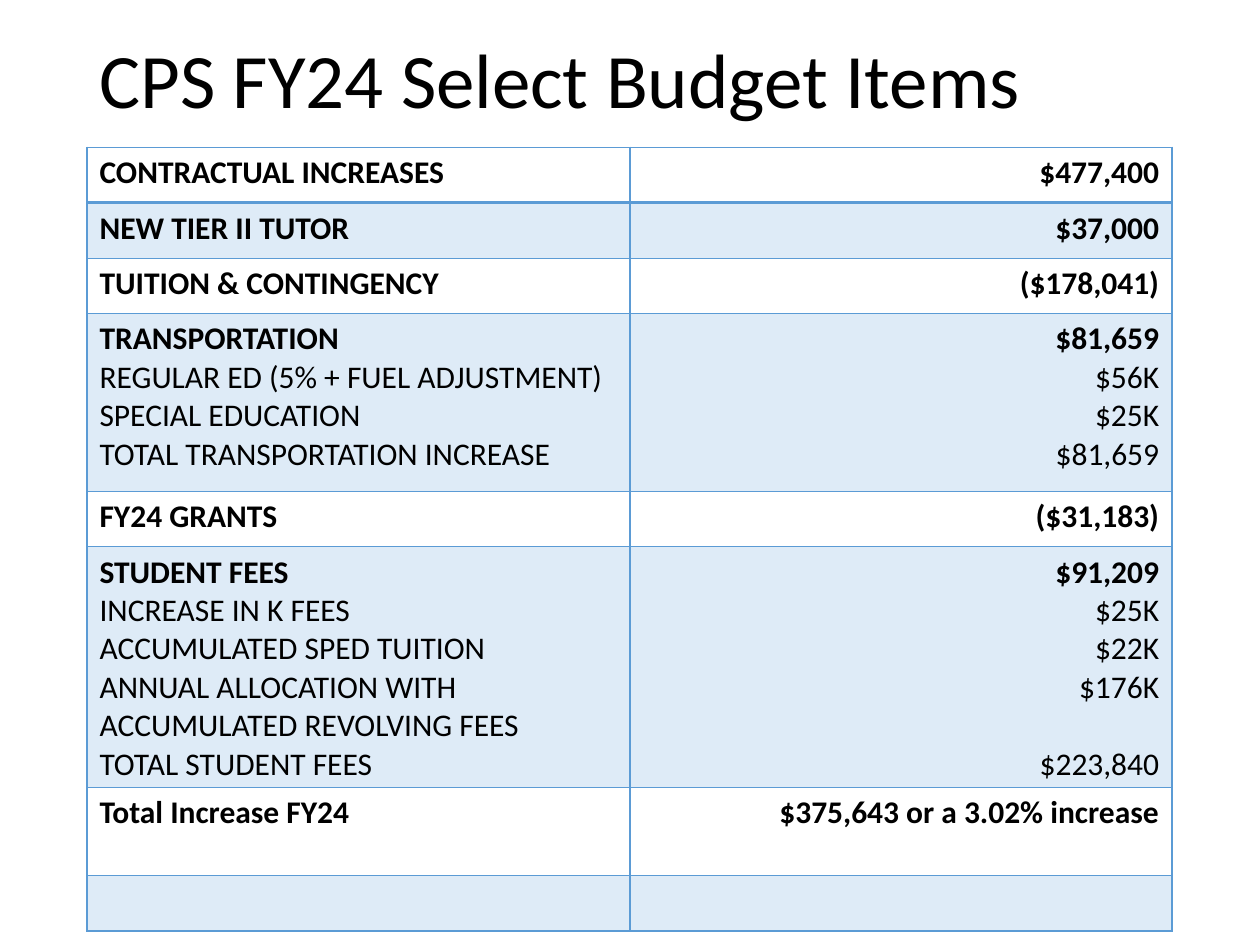
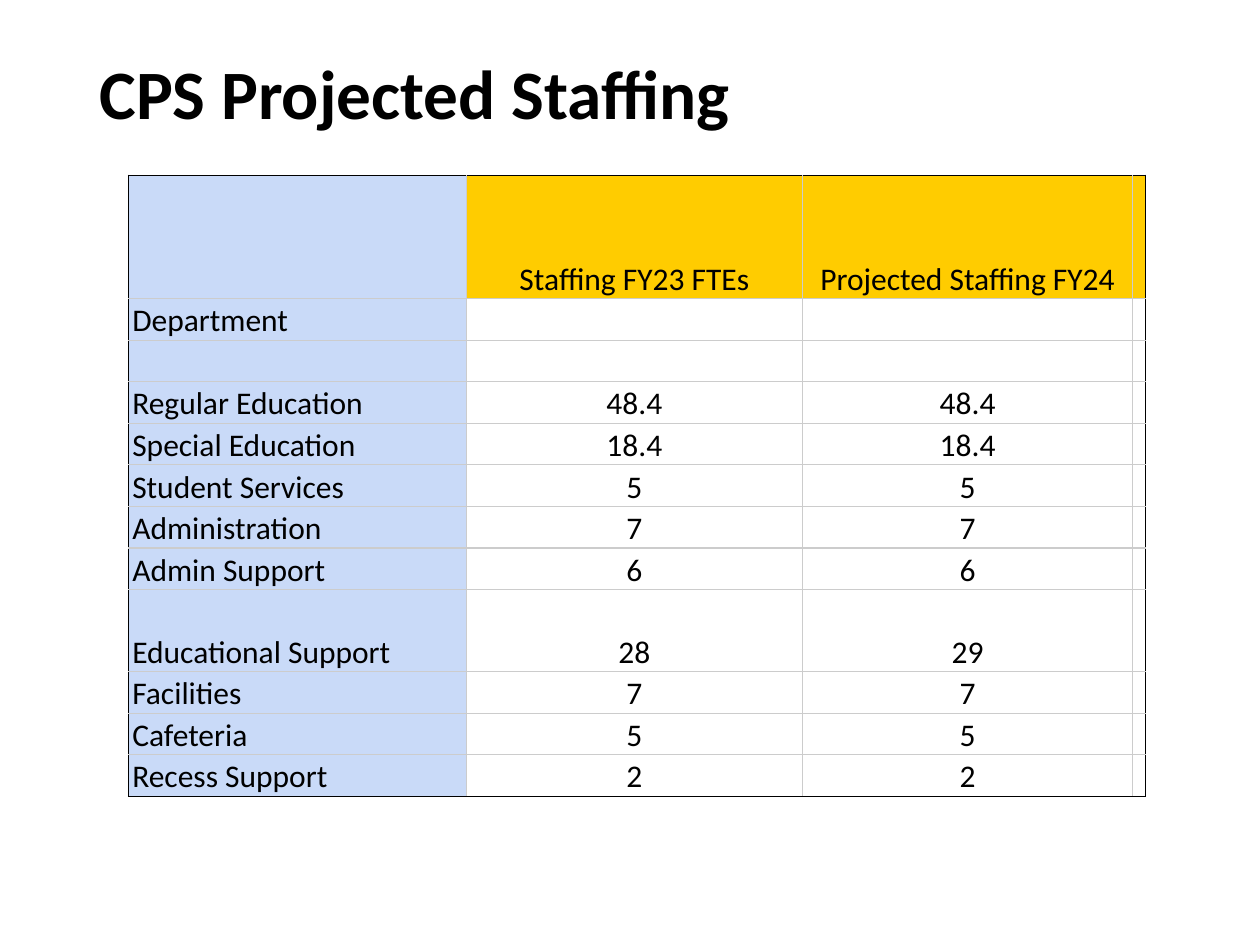
from lxml import etree
from pptx import Presentation
from pptx.dml.color import RGBColor
from pptx.enum.text import MSO_ANCHOR as Anchor, PP_ALIGN as Align
from pptx.oxml.ns import qn
from pptx.util import Inches, Pt

FONT = "Calibri"
BLACK, BLUE, PALE_BLUE = "000000", "5B9BD5", "DEEBF7"
GREY, LAVENDER, GOLD = "CCCCCC", "C9DAF8", "FFCC00"
BODY_SIZE = 18
LINE_HEIGHT = 1.22

BUDGET_ITEMS = [
    ("CONTRACTUAL INCREASES", "$477,400"),
    ("NEW TIER II TUTOR", "$37,000"),
    ("TUITION & CONTINGENCY", "($178,041)"),
    ("TRANSPORTATION\nREGULAR ED (5% + FUEL ADJUSTMENT)\nSPECIAL EDUCATION\n"
     "TOTAL TRANSPORTATION INCREASE", "$81,659\n$56K\n$25K\n$81,659"),
    ("FY24 GRANTS", "($31,183)"),
    ("STUDENT FEES\nINCREASE IN K FEES\nACCUMULATED SPED TUITION\nANNUAL ALLOCATION WITH\n"
     "ACCUMULATED REVOLVING FEES\nTOTAL STUDENT FEES",
     "$91,209\n$25K\n$22K\n$176K\n\n$223,840"),
    ("Total Increase FY24", "$375,643 or a 3.02% increase"),
    ("", ""),
]
STAFFING = [
    ("", "Staffing FY23 FTEs", "Projected Staffing FY24", ""),
    ("Department", "", "", ""),
    ("", "", "", ""),
    ("Regular Education", "48.4", "48.4", ""),
    ("Special Education", "18.4", "18.4", ""),
    ("Student Services", "5", "5", ""),
    ("Administration", "7", "7", ""),
    ("Admin Support", "6", "6", ""),
    ("Educational Support", "28", "29", ""),
    ("Facilities", "7", "7", ""),
    ("Cafeteria", "5", "5", ""),
    ("Recess Support", "2", "2", ""),
]


def color(value):
    return RGBColor.from_string(value)


def apply_format(target, values):
    for name, value in values.items():
        setattr(target, name, value)


class Deck:
    def __init__(self):
        self.presentation = Presentation()
        apply_format(self.presentation, {"slide_width": Inches(10), "slide_height": Inches(7.5)})
        self.slide = None

    def add_slide(self):
        self.slide = self.presentation.slides.add_slide(self.presentation.slide_layouts[6])

    def add_text(self, paragraph, text, size, bold=False):
        run = paragraph.add_run()
        run.text = text
        apply_format(run.font, {"name": FONT, "size": Pt(size), "bold": bold})
        run.font.color.rgb = color(BLACK)

    def title(self, text, top, height, size, bold=False):
        shape = self.slide.shapes.add_textbox(Inches(0.69), Inches(top), Inches(8.62), Inches(height))
        frame = shape.text_frame
        apply_format(frame, {"word_wrap": True, "vertical_anchor": Anchor.MIDDLE})
        paragraph = frame.paragraphs[0]
        paragraph.line_spacing = 0.9
        self.add_text(paragraph, text, size, bold)

    def cell_text(self, cell, text, align, bold_heading):
        """Add one paragraph per line; an empty line becomes space above the next."""
        paragraph = cell.text_frame.paragraphs[0]
        skipped = 0
        for number, line in enumerate(text.split("\n")):
            if not line:
                skipped += 1
                continue
            if number:
                paragraph = cell.text_frame.add_paragraph()
            paragraph.alignment = align
            paragraph.space_before = Pt(round(skipped * BODY_SIZE * LINE_HEIGHT))
            skipped = 0
            self.add_text(paragraph, line, BODY_SIZE, bold_heading and number == 0)

    def cell_borders(self, cell, borders):
        """Borders are (colour, points) pairs in the order left, right, top, bottom."""
        properties = cell._tc.get_or_add_tcPr()
        for side, (line_color, points) in zip("LRTB", borders):
            line = etree.SubElement(properties, qn(f"a:ln{side}"), w=str(Pt(points)))
            fill = etree.SubElement(line, qn("a:solidFill"))
            etree.SubElement(fill, qn("a:srgbClr"), val=line_color)

    def table(self, rows, left, top, widths, heights, cell_format, aligns, fill_rule,
              border_rule, bold_heading=False):
        """The rules take (row, column) and return a fill colour or None, and four borders."""
        table = self.slide.shapes.add_table(
            len(rows), len(widths), Inches(left), Inches(top),
            Inches(sum(widths)), Inches(sum(heights))).table
        apply_format(table, {"first_row": False, "horz_banding": False})
        for column, width in zip(table.columns, widths):
            column.width = Inches(width)
        for row, height in zip(table.rows, heights):
            row.height = Inches(height)
        for r, texts in enumerate(rows):
            for c, text in enumerate(texts):
                cell = table.cell(r, c)
                apply_format(cell, cell_format)
                self.cell_text(cell, text, aligns[c], bold_heading)
                self.cell_borders(cell, border_rule(r, c))
                fill = fill_rule(r, c)
                if fill:
                    cell.fill.solid()
                    cell.fill.fore_color.rgb = color(fill)
                else:
                    cell.fill.background()


def budget_fill(row, column):
    return PALE_BLUE if row % 2 else None


def budget_borders(row, column):
    thin, thick = (BLUE, 1), (BLUE, 2)
    return thin, thin, thick if row == 1 else thin, thick if row == 0 else thin


def staffing_fill(row, column):
    if column == 0:
        return LAVENDER
    return GOLD if row == 0 else None


def staffing_borders(row, column):
    """Black on the outer edges, grey inside."""
    outer = (column == 0, column == len(STAFFING[0]) - 1, row == 0, row == len(STAFFING) - 1)
    return [(BLACK if edge else GREY, 0.75) for edge in outer]


def main():
    deck = Deck()

    deck.add_slide()
    deck.title("CPS FY24 Select Budget Items", 0.15, 1.02, 44)
    deck.table(BUDGET_ITEMS, 0.69, 1.17, [4.31, 4.3],
               [0.44, 0.44, 0.44, 1.41, 0.44, 1.91, 0.7, 0.44],
               {"vertical_anchor": Anchor.TOP}, [Align.LEFT, Align.RIGHT],
               budget_fill, budget_borders, bold_heading=True)

    deck.add_slide()
    deck.title("CPS Projected Staffing", 0.4, 0.74, 39.6, bold=True)
    row_height = 0.33
    heights = [0.98] + [row_height] * 7 + [0.65] + [row_height] * 3
    tight_cell = {"vertical_anchor": Anchor.BOTTOM,
                  "margin_left": Inches(0.03), "margin_right": Inches(0.03),
                  "margin_top": 0, "margin_bottom": 0}
    deck.table(STAFFING, 1.02, 1.39, [2.68, 2.67, 2.62, 0.09], heights, tight_cell,
               [Align.LEFT] + [Align.CENTER] * 3, staffing_fill, staffing_borders)

    deck.presentation.save("out.pptx")


if __name__ == "__main__":
    main()
